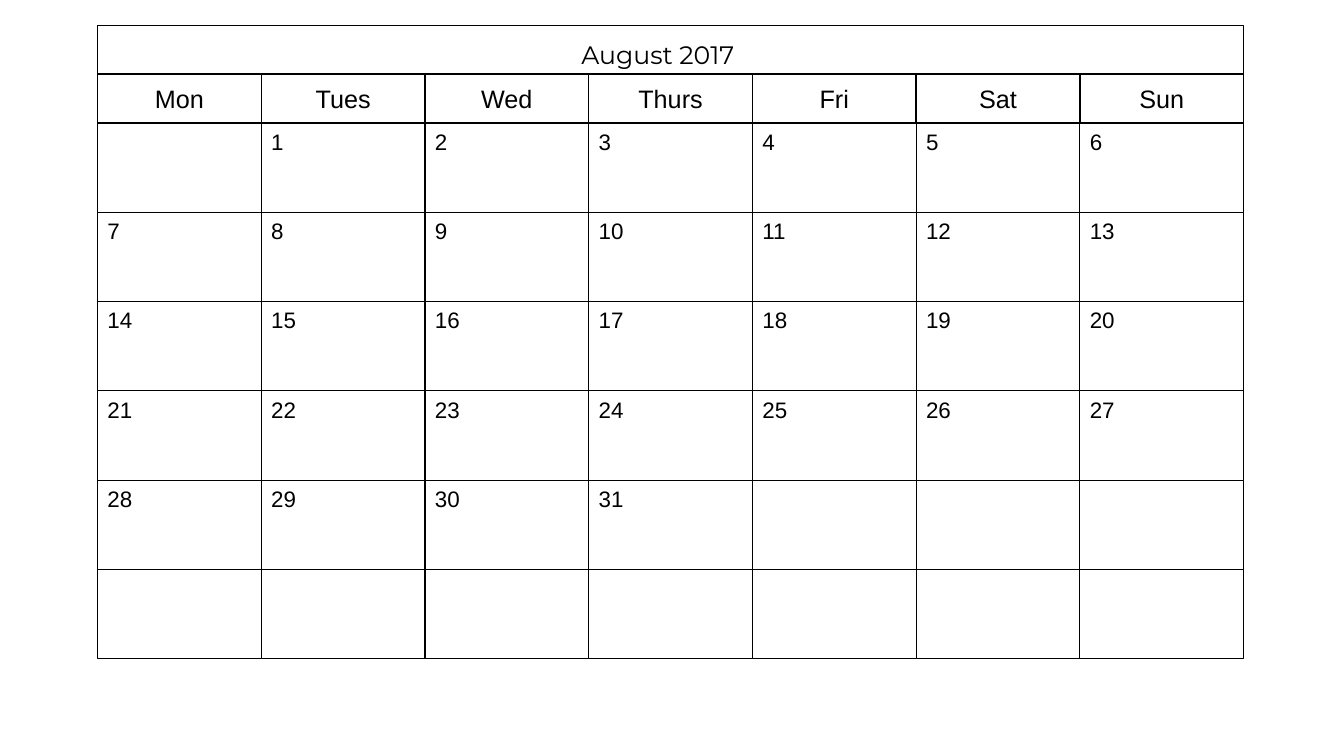
from dataclasses import dataclass

from pptx import Presentation
from pptx import util as u
from pptx.dml import color
from pptx.enum import shapes, text


@dataclass(frozen=True)
class Theme:
    paper: color.RGBColor = color.RGBColor(255, 255, 255)
    ink: color.RGBColor = color.RGBColor(0, 0, 0)
    title_font: str = "Montserrat"
    body_font: str = "Arial"
    heading_size: u.Pt = u.Pt(18)
    date_size: u.Pt = u.Pt(16)
    heading_line: u.Pt = u.Pt(1)
    date_line: u.Pt = u.Pt(0.75)


theme = Theme()

# Calendar grid, in centimetres
WEEKDAYS = ["Mon", "Tues", "Wed", "Thurs", "Fri", "Sat", "Sun"]
WEEKS = 6
FIRST_WEEKDAY = 1  # the month starts on a Tuesday
LAST_DATE = 31
LEFT, GRID_WIDTH = 2.46, 28.88
DAY_WIDTH = GRID_WIDTH / len(WEEKDAYS)
MONTH_TOP, WEEKDAY_TOP, DATES_TOP = 0.64, 1.87, 3.1
HEADING_HEIGHT, WEEK_HEIGHT = 1.23, 2.25

prs = Presentation()
prs.slide_width, prs.slide_height = u.Cm(33.87), u.Cm(19.05)
slide = prs.slides.add_slide(prs.slide_layouts[6])


def add_cell(left, top, width, height, line_width):
    cell = slide.shapes.add_shape(
        shapes.MSO_SHAPE.RECTANGLE, u.Cm(left), u.Cm(top), u.Cm(width), u.Cm(height)
    )
    cell.shadow.inherit = False
    cell.fill.solid()
    cell.fill.fore_color.rgb = theme.paper
    cell.line.color.rgb = theme.ink
    cell.line.width = line_width
    return cell


def write(box, words, font_name, size, align, anchor):
    box.text_frame.vertical_anchor = anchor
    paragraph = box.text_frame.paragraphs[0]
    paragraph.alignment = align
    run = paragraph.add_run()
    run.text = words
    run.font.name = font_name
    run.font.size = size
    run.font.color.rgb = theme.ink


# Month band
add_cell(LEFT, MONTH_TOP, GRID_WIDTH, HEADING_HEIGHT, theme.heading_line)
month = slide.shapes.add_textbox(u.Cm(14.4), u.Cm(0.86), u.Cm(4.88), u.Cm(1.02))
month.fill.solid()
month.fill.fore_color.rgb = theme.paper
month.text_frame.word_wrap = False
month.text_frame.auto_size = text.MSO_AUTO_SIZE.SHAPE_TO_FIT_TEXT
write(month, "August 2017", theme.title_font, theme.heading_size,
      text.PP_ALIGN.LEFT, text.MSO_ANCHOR.TOP)

# Weekday headings
for column, name in enumerate(WEEKDAYS):
    weekday = add_cell(LEFT + column * DAY_WIDTH, WEEKDAY_TOP,
                       DAY_WIDTH, HEADING_HEIGHT, theme.heading_line)
    weekday.text_frame.margin_top = weekday.text_frame.margin_bottom = u.Cm(0.05)
    write(weekday, name, theme.body_font, theme.heading_size,
          text.PP_ALIGN.CENTER, text.MSO_ANCHOR.MIDDLE)

# Dates, with empty cells before and after the month
for week in range(WEEKS):
    for column in range(len(WEEKDAYS)):
        day = add_cell(LEFT + column * DAY_WIDTH, DATES_TOP + week * WEEK_HEIGHT,
                       DAY_WIDTH, WEEK_HEIGHT, theme.date_line)
        date = week * len(WEEKDAYS) + column - FIRST_WEEKDAY + 1
        if 1 <= date <= LAST_DATE:
            write(day, str(date), theme.body_font, theme.date_size,
                  text.PP_ALIGN.LEFT, text.MSO_ANCHOR.TOP)

prs.save("out.pptx")
